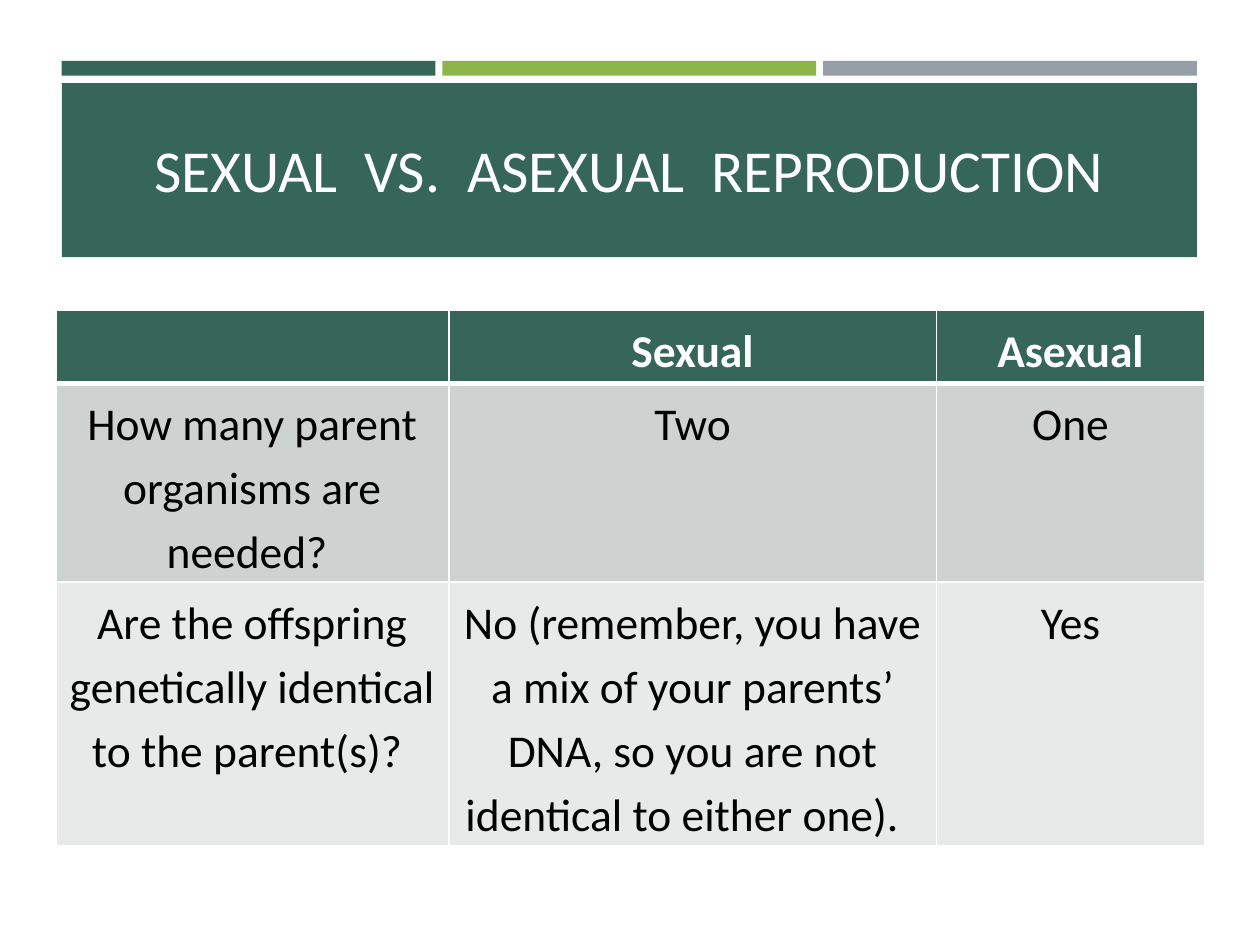
from lxml.etree import SubElement
from pptx import Presentation
from pptx.dml.color import RGBColor
from pptx.enum.shapes import MSO_SHAPE
from pptx.enum.text import MSO_ANCHOR, PP_ALIGN
from pptx.oxml.ns import qn
from pptx.util import Pt

GREEN, LIME, GRAY = "366658", "8CB64A", "969FA7"
WHITE, BLACK = "FFFFFF", "000000"


def color(value):
    return RGBColor.from_string(value)


def set_text(text_frame, text, size, text_color, bold=False):
    text_frame.text = text
    paragraph = text_frame.paragraphs[0]
    paragraph.alignment = PP_ALIGN.CENTER
    for run in paragraph.runs:
        run.font.name = "Calibri"
        run.font.size = Pt(size)
        run.font.bold = bold
        run.font.color.rgb = color(text_color)
    return paragraph


presentation = Presentation()
presentation.slide_width = Pt(720)
presentation.slide_height = Pt(540)
slide = presentation.slides.add_slide(presentation.slide_layouts[6])

left, banner_width, gap = 35.3, 648.7, 4
bar_width = (banner_width - 2 * gap) / 3
blocks = [(left, 47.5, banner_width, 99.4, GREEN)]
for index, fill in enumerate([GREEN, LIME, GRAY]):
    blocks.append((left + index * (bar_width + gap), 34.8, bar_width, 8.5, fill))

for x, y, width, height, fill in blocks:
    shape = slide.shapes.add_shape(MSO_SHAPE.RECTANGLE, Pt(x), Pt(y), Pt(width), Pt(height))
    shape.shadow.inherit = False
    shape.fill.solid()
    shape.fill.fore_color.rgb = color(fill)
    shape.line.fill.background()

title = slide.shapes.add_textbox(Pt(37.5), Pt(66.3), Pt(643.7), Pt(59.8))
title.text_frame.word_wrap = True
title.text_frame.vertical_anchor = MSO_ANCHOR.MIDDLE
set_text(title.text_frame, "SEXUAL  VS.  ASEXUAL  REPRODUCTION", 34, "FFFEFF")

rows = [
    ["", "Sexual", "Asexual"],
    ["How many parent organisms are needed? ", "Two", "One"],
    [
        "Are the offspring genetically identical to the parent(s)? ",
        "No (remember, you have a mix of your parents’ DNA, so you are not identical to either one).  ",
        "Yes",
    ],
]
column_widths = [224.6, 278.6, 153.4]
row_heights = [41, 113, 150.5]
row_fills = [GREEN, "CED3D1", "E8EAEA"]

table = slide.shapes.add_table(
    3, 3, Pt(31.9), Pt(177.3), Pt(sum(column_widths)), Pt(sum(row_heights))
).table
for column, width in zip(table.columns, column_widths):
    column.width = Pt(width)
for row, height in zip(table.rows, row_heights):
    row.height = Pt(height)

for row_index, texts in enumerate(rows):
    header = row_index == 0
    for column_index, text in enumerate(texts):
        cell = table.cell(row_index, column_index)
        cell.margin_left = cell.margin_right = Pt(3)
        cell.margin_top = cell.margin_bottom = Pt(3)
        paragraph = set_text(cell.text_frame, text, 26, WHITE if header else BLACK, header)
        paragraph.line_spacing = 1.15
        properties = cell._tc.get_or_add_tcPr()
        for side in ["lnL", "lnR", "lnT", "lnB"]:
            thick = (header and side == "lnB") or (row_index == 1 and side == "lnT")
            line = SubElement(properties, qn(f"a:{side}"), w=str(Pt(3 if thick else 1)))
            line_fill = SubElement(line, qn("a:solidFill"))
            SubElement(line_fill, qn("a:srgbClr"), val=WHITE)
        cell.fill.solid()
        cell.fill.fore_color.rgb = color(row_fills[row_index])

presentation.save("out.pptx")
